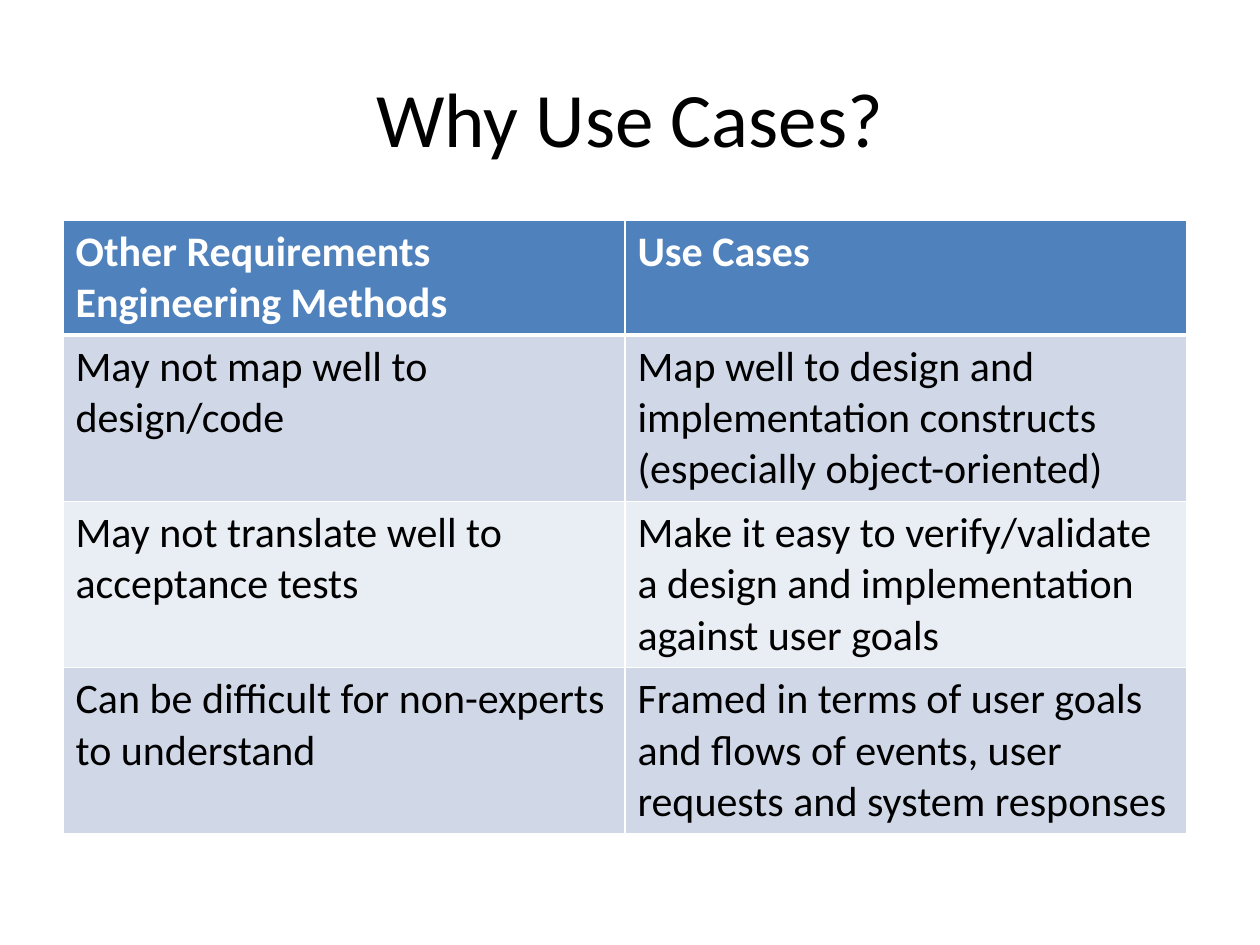
from lxml import etree
from pptx import Presentation
from pptx.dml.color import RGBColor
from pptx.enum.text import MSO_ANCHOR, PP_ALIGN
from pptx.oxml.ns import qn
from pptx.util import Inches, Pt

LEFT = PP_ALIGN.LEFT
CENTER = PP_ALIGN.CENTER
MIDDLE = MSO_ANCHOR.MIDDLE

FONT = "Calibri"
BLACK = "000000"
WHITE = "FFFFFF"
HEADER_FILL = "4F81BD"
BAND_FILLS = ("D0D8E8", "E9EDF4")
HEADER_HEIGHT = 0.91
BODY_HEIGHT = 1.32

COMPARISON = [
    ("Other Requirements Engineering Methods", "Use Cases"),
    ("May not map well to design/code",
     "Map well to design and implementation constructs (especially object-oriented)"),
    ("May not translate well to acceptance tests",
     "Make it easy to verify/validate a design and implementation against user goals"),
    ("Can be difficult for non-experts to understand",
     "Framed in terms of user goals and flows of events, user requests and system responses"),
]


def color(value):
    """Turn a hex string into a colour."""
    return RGBColor.from_string(value)


def write_text(text_frame, text, size=24, fill=BLACK, bold=False, align=LEFT):
    """Write one formatted paragraph into a text frame."""
    text_frame.word_wrap = True
    paragraph = text_frame.paragraphs[0]
    paragraph.alignment = align
    run = paragraph.add_run()
    run.text = text
    run.font.name = FONT
    run.font.size = Pt(size)
    run.font.bold = bold
    run.font.color.rgb = color(fill)


def set_borders(cell, bottom_width):
    """Give a cell thin white borders and a bottom border of the given width."""
    properties = cell._tc.get_or_add_tcPr()
    for side, width in (("L", 1), ("R", 1), ("T", 1), ("B", bottom_width)):
        line = etree.SubElement(properties, qn(f"a:ln{side}"), w=str(Pt(width)))
        solid = etree.SubElement(line, qn("a:solidFill"))
        etree.SubElement(solid, qn("a:srgbClr"), val=WHITE)


def add_title(slide, text, left, top, width, height):
    """Place the centred slide title in its box."""
    shape = slide.shapes.add_textbox(Inches(left), Inches(top), Inches(width), Inches(height))
    shape.text_frame.vertical_anchor = MIDDLE
    write_text(shape.text_frame, text, size=44, align=CENTER)


def add_comparison_table(slide, rows, left, top, width):
    """Place the banded comparison table with equal columns."""
    heights = [HEADER_HEIGHT] + [BODY_HEIGHT] * (len(rows) - 1)
    column_count = len(rows[0])
    shape = slide.shapes.add_table(len(rows), column_count, Inches(left), Inches(top),
                                   Inches(width), Inches(sum(heights)))
    table = shape.table
    for column in table.columns:
        column.width = Inches(width / column_count)
    for row_index, texts in enumerate(rows):
        table.rows[row_index].height = Inches(heights[row_index])
        is_header = row_index == 0
        band = HEADER_FILL if is_header else BAND_FILLS[(row_index - 1) % 2]
        for column_index, text in enumerate(texts):
            cell = table.cell(row_index, column_index)
            set_borders(cell, bottom_width=3 if is_header else 1)
            cell.fill.solid()
            cell.fill.fore_color.rgb = color(band)
            write_text(cell.text_frame, text, bold=is_header,
                       fill=WHITE if is_header else BLACK)


def main():
    """Build and save the presentation."""
    presentation = Presentation()
    presentation.slide_width = Inches(10)
    presentation.slide_height = Inches(7.5)
    slide = presentation.slides.add_slide(presentation.slide_layouts[6])
    add_title(slide, "Why Use Cases?", 0.5, 0.3, 9, 1.25)
    add_comparison_table(slide, COMPARISON, 0.5, 1.75, 8.92)
    presentation.save("out.pptx")


if __name__ == "__main__":
    main()
